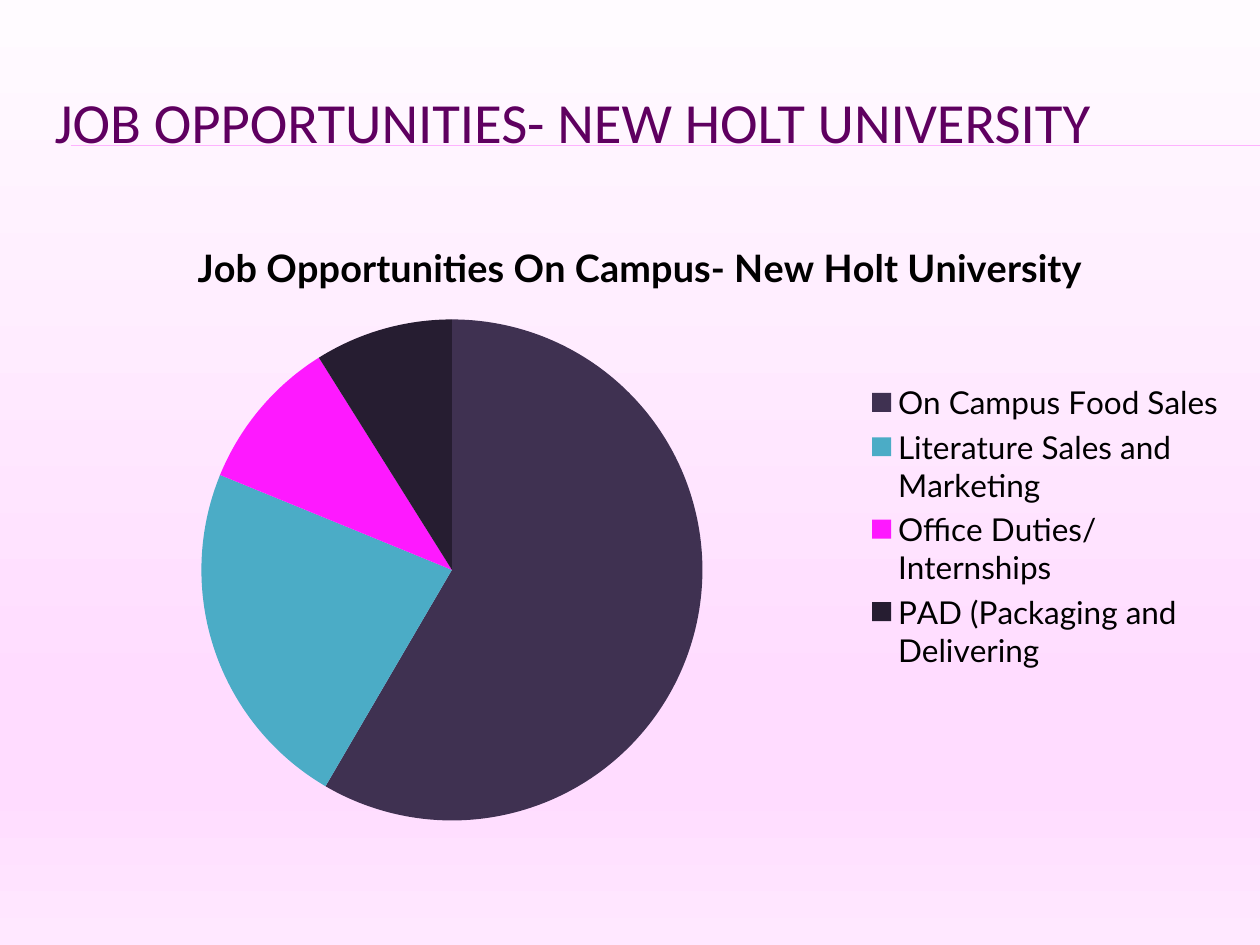
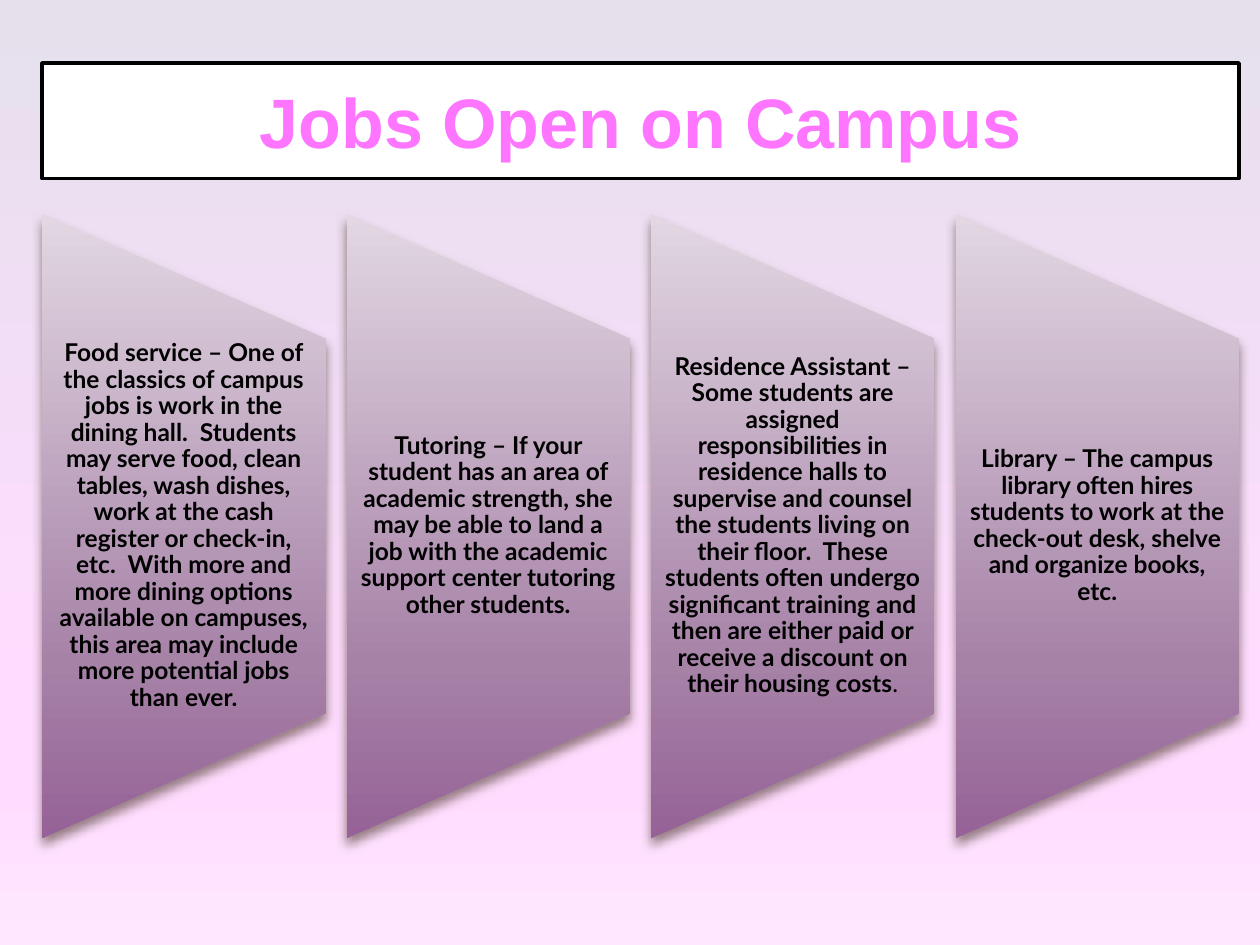
from lxml.etree import SubElement
from pptx import Presentation
from pptx.chart.data import CategoryChartData
from pptx.dml.color import RGBColor
from pptx.enum.chart import XL_CHART_TYPE, XL_LEGEND_POSITION
from pptx.enum.shapes import MSO_CONNECTOR, MSO_SHAPE
from pptx.enum.text import MSO_ANCHOR, MSO_AUTO_SIZE, PP_ALIGN
from pptx.oxml.ns import qn
from pptx.util import Pt

# Colours
BLACK = RGBColor(0x00, 0x00, 0x00)
WHITE = RGBColor(0xFF, 0xFF, 0xFF)
PLUM = RGBColor(0x5F, 0x00, 0x60)
PINK = RGBColor(0xFE, 0x75, 0xFF)
RULE_PINK = RGBColor(0xFE, 0xB2, 0xFF)
SHADOW_BROWN = RGBColor(0x4E, 0x3B, 0x30)
SLICE_COLORS = [RGBColor(0x3F, 0x31, 0x51), RGBColor(0x4B, 0xAC, 0xC6),
                RGBColor(0xFE, 0x19, 0xFF), RGBColor(0x26, 0x1D, 0x31)]

# Gradients, as (percent, colour) from top to bottom
LOWER_BACKGROUND = [(74, RGBColor(0xFF, 0xDC, 0xFF)), (83, RGBColor(0xFF, 0xDC, 0xFF)),
                    (100, RGBColor(0xFF, 0xE8, 0xFF))]
PALE_BACKGROUND = [(0, RGBColor(0xFF, 0xFB, 0xFF))] + LOWER_BACKGROUND
LILAC_BACKGROUND = [(0, RGBColor(0xE5, 0xE0, 0xEC))] + LOWER_BACKGROUND
BANNER_GRADIENT = [(0, RGBColor(0xE2, 0xD7, 0xE2)), (72, RGBColor(0xA6, 0x82, 0xA7)),
                   (100, RGBColor(0x96, 0x62, 0x97))]

# Shared layout, in points
SLIDE_WIDTH, SLIDE_HEIGHT = 720, 540
MARGIN, CONTENT_WIDTH = 24, 684
TITLE_TOP, TITLE_HEIGHT = 36, 66

BODY_FONT = "Lato"
TITLE_ONLY_LAYOUT = 5

UNIVERSITY = "New Holt University"

JOB_SHARES = {
    "On Campus Food Sales": 59,
    "Literature Sales and Marketing": 23,
    "Office Duties/ Internships": 10,
    "PAD (Packaging and Delivering": 9,
}

# Each job is a bold text and its plain ending
JOBS = [
    ("Food service – One of the classics of campus jobs is work in the dining hall.  "
     "Students may serve food, clean tables, wash dishes, work at the cash register or "
     "check-in, etc.  With more and more dining options available on campuses, this area "
     "may include more potential jobs than ever.", ""),
    ("Tutoring – If your student has an area of academic strength, she may be able to "
     "land a job with the academic support center tutoring other students.", ""),
    ("Residence Assistant – Some students are assigned responsibilities in residence "
     "halls to supervise and counsel the students living on their floor.  These students "
     "often undergo significant training and then are either paid or receive a discount "
     "on their housing costs", "."),
    ("Library – The campus library often hires students to work at the check-out desk, "
     "shelve and organize books, etc.", ""),
]


def format_font(font, size, name=BODY_FONT, color=BLACK, bold=False):
    font.size, font.name, font.bold = Pt(size), name, bold
    font.color.rgb = color


def add_text(paragraph, text, align=PP_ALIGN.LEFT, line_spacing=1.0, **font_format):
    paragraph.alignment = align
    paragraph.line_spacing = line_spacing
    run = paragraph.add_run()
    run.text = text
    format_font(run.font, **font_format)


def fill_gradient(fill, element, stops):
    """Fill from top to bottom, whatever the rotation of the shape."""
    fill.gradient()
    fill.gradient_angle = 270
    gradient = next(element.iter(qn("a:gradFill")))
    gradient.set("rotWithShape", "0")
    stop_list = gradient.find(qn("a:gsLst"))
    for old_stop in list(stop_list):
        stop_list.remove(old_stop)
    for percent, color in stops:
        stop = SubElement(stop_list, qn("a:gs"), pos=str(percent * 1000))
        SubElement(stop, qn("a:srgbClr"), val=str(color))


class Deck:
    def __init__(self):
        self.presentation = Presentation()
        self.presentation.slide_width = Pt(SLIDE_WIDTH)
        self.presentation.slide_height = Pt(SLIDE_HEIGHT)
        self.slide = None

    def add_slide(self, background):
        layout = self.presentation.slide_layouts[TITLE_ONLY_LAYOUT]
        self.slide = self.presentation.slides.add_slide(layout)
        slide_background = self.slide.background
        fill_gradient(slide_background.fill, self.slide.element, background)

    def title(self, text, boxed=False, **text_format):
        shape = self.slide.shapes.title
        shape.left, shape.top = Pt(MARGIN), Pt(TITLE_TOP)
        shape.width, shape.height = Pt(CONTENT_WIDTH), Pt(TITLE_HEIGHT)
        if boxed:
            shape.fill.solid()
            shape.fill.fore_color.rgb = WHITE
            shape.line.color.rgb = BLACK
            shape.line.width = Pt(2)
        frame = shape.text_frame
        frame.auto_size = MSO_AUTO_SIZE.NONE
        frame.vertical_anchor = MSO_ANCHOR.MIDDLE
        add_text(frame.paragraphs[0], text, **text_format)
        # Keep the title in front of the rules
        self.slide.shapes.element.append(shape.element)

    def rule(self, left, top):
        line = self.slide.shapes.add_connector(
            MSO_CONNECTOR.STRAIGHT, Pt(left), Pt(top), Pt(SLIDE_WIDTH), Pt(top))
        line.line.color.rgb = RULE_PINK
        line.line.width = Pt(0.75)
        SubElement(line.element.spPr, qn("a:effectLst"))

    def pie(self, title, shares, top, height):
        data = CategoryChartData()
        data.categories = list(shares)
        data.add_series("Series 1", list(shares.values()))
        chart = self.slide.shapes.add_chart(
            XL_CHART_TYPE.PIE, Pt(MARGIN), Pt(top), Pt(CONTENT_WIDTH), Pt(height), data).chart
        format_font(chart.font, size=18)
        chart.has_title = True
        chart.chart_title.include_in_layout = False
        add_text(chart.chart_title.text_frame.paragraphs[0], title,
                 align=PP_ALIGN.CENTER, size=21.6, bold=True)
        chart.has_legend = True
        chart.legend.position = XL_LEGEND_POSITION.RIGHT
        chart.legend.include_in_layout = False
        format_font(chart.legend.font, size=18)
        plot = chart.plots[0]
        plot.vary_by_categories = True
        for index, color in enumerate(SLICE_COLORS):
            slice_fill = plot.series[0].points[index].format.fill
            slice_fill.solid()
            slice_fill.fore_color.rgb = color

    def banner(self, left, top, width, height):
        # The shape is turned, so its own width runs down the slide
        shape = self.slide.shapes.add_shape(
            MSO_SHAPE.FLOWCHART_MANUAL_OPERATION,
            Pt(left + (width - height) / 2), Pt(top + (height - width) / 2),
            Pt(height), Pt(width))
        shape.rotation = 270
        fill_gradient(shape.fill, shape.element, BANNER_GRADIENT)
        shape.line.fill.background()
        # Soft shadow below
        effects = SubElement(shape.element.spPr, qn("a:effectLst"))
        shadow = SubElement(effects, qn("a:outerShdw"), blurRad=str(Pt(6)),
                            dist=str(Pt(4)), dir="5400000", rotWithShape="0")
        color = SubElement(shadow, qn("a:srgbClr"), val=str(SHADOW_BROWN))
        SubElement(color, qn("a:alpha"), val="60000")

    def text_box(self, runs, left, top, width, height, **text_format):
        box = self.slide.shapes.add_textbox(Pt(left), Pt(top), Pt(width), Pt(height))
        frame = box.text_frame
        frame.word_wrap = True
        frame.vertical_anchor = MSO_ANCHOR.MIDDLE
        frame.margin_top = frame.margin_bottom = 0
        for text, bold in runs:
            if text:
                add_text(frame.paragraphs[0], text, bold=bold, **text_format)


def build_job_shares(deck):
    deck.add_slide(PALE_BACKGROUND)
    for top in (83, 83.2):
        deck.rule(40.5, top)
    deck.title(f"JOB OPPORTUNITIES- {UNIVERSITY.upper()}",
               size=32.4, name="Calibri", color=PLUM)
    deck.pie(f"Job Opportunities On Campus- {UNIVERSITY}", JOB_SHARES,
             top=122.4, height=356.4)


def build_open_jobs(deck):
    deck.add_slide(LILAC_BACKGROUND)
    deck.title("Jobs Open on Campus", boxed=True, align=PP_ALIGN.CENTER,
               size=40, name="Arial", color=PINK, bold=True)
    # Four equal banners across the content width
    width, height, top = 162, 356.4, 122.4
    text_height = height * 0.6
    pitch = (CONTENT_WIDTH - width) / (len(JOBS) - 1)
    for index, (text, ending) in enumerate(JOBS):
        left = MARGIN + index * pitch
        deck.banner(left, top, width, height)
        deck.text_box([(text, True), (ending, False)], left,
                      top + (height - text_height) / 2, width, text_height,
                      align=PP_ALIGN.CENTER, line_spacing=0.9, size=14)


def main():
    deck = Deck()
    build_job_shares(deck)
    build_open_jobs(deck)
    deck.presentation.save("out.pptx")


if __name__ == "__main__":
    main()
